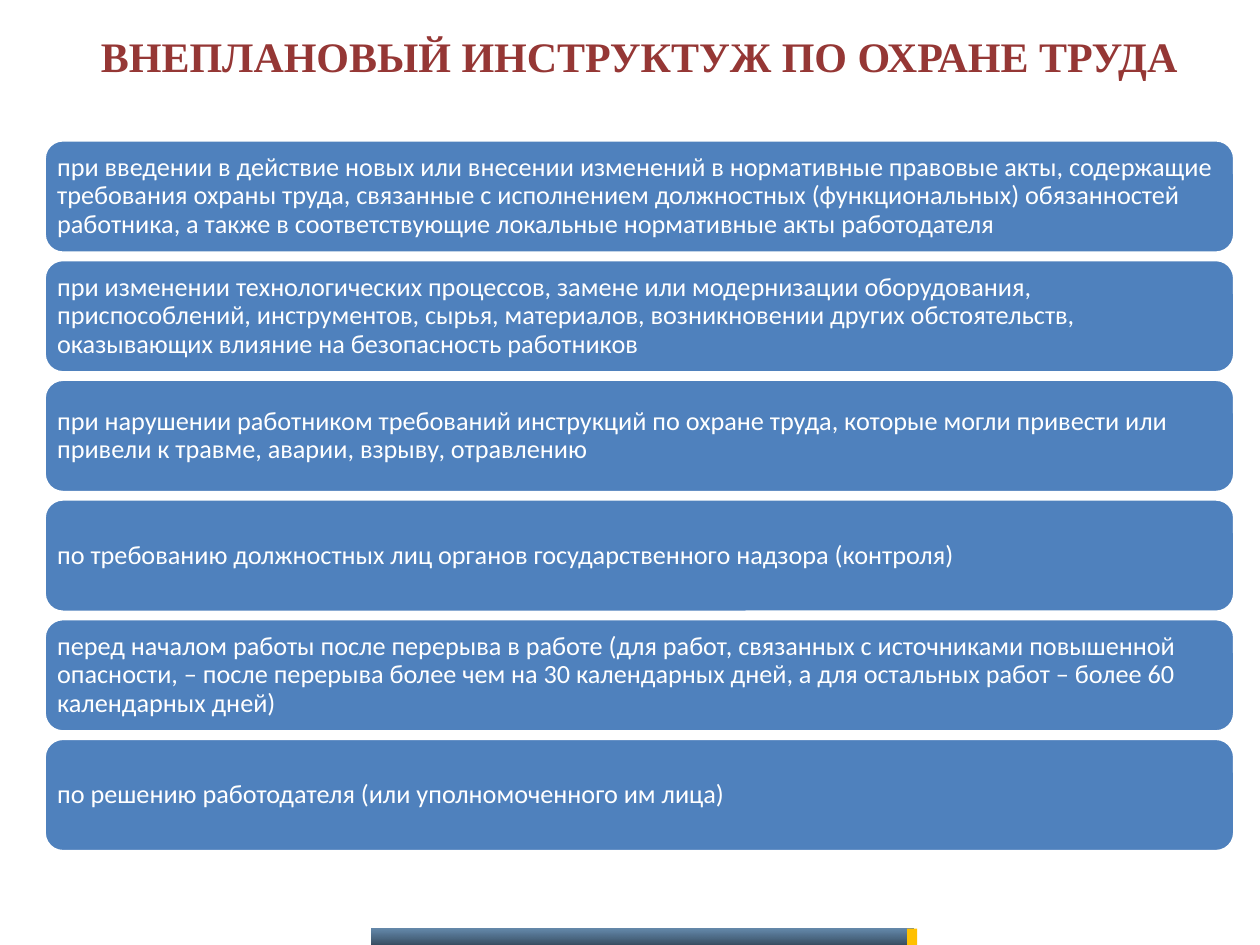
from lxml import etree
from pptx import Presentation
from pptx.dml.color import RGBColor
from pptx.enum.shapes import MSO_SHAPE
from pptx.enum.text import MSO_ANCHOR, MSO_AUTO_SIZE, PP_ALIGN
from pptx.oxml.ns import qn
from pptx.util import Inches, Pt

RECT, ROUNDED = MSO_SHAPE.RECTANGLE, MSO_SHAPE.ROUNDED_RECTANGLE
MIDDLE = MSO_ANCHOR.MIDDLE
LEFT, CENTER = PP_ALIGN.LEFT, PP_ALIGN.CENTER

# Content
TITLE = "ВНЕПЛАНОВЫЙ ИНСТРУКТУЖ ПО ОХРАНЕ ТРУДА"
REASONS = [
    "при введении в действие новых или внесении изменений в нормативные правовые акты, "
    "содержащие требования охраны труда, связанные с исполнением должностных "
    "(функциональных) обязанностей работника, а также в соответствующие локальные "
    "нормативные акты работодателя",
    "при изменении технологических процессов, замене или модернизации оборудования, "
    "приспособлений, инструментов, сырья, материалов, возникновении других "
    "обстоятельств, оказывающих влияние на безопасность работников",
    "при нарушении работником требований инструкций по охране труда, которые могли "
    "привести или привели к травме, аварии, взрыву, отравлению",
    "по требованию должностных лиц органов государственного надзора (контроля)",
    "перед началом работы после перерыва в работе (для работ, связанных с источниками "
    "повышенной опасности, – после перерыва более чем на 30 календарных дней, а для "
    "остальных работ – более 60 календарных дней)",
    "по решению работодателя (или уполномоченного им лица)",
]
FOOTER_STOPS = [("003C73", 60), ("001C35", 80)]  # colour, opacity in percent

# Layout in inches
X, WIDTH = 0.35, 9.45
CARD_TOP, CARD_HEIGHT, CARD_STEP = 1.11, 0.9, 0.95
FOOTER_TOP, FOOTER_HEIGHT = 7.37, 0.13


def rgb(value):
    return RGBColor.from_string(value)


def add_box(shapes, kind, x, y, w, h, fill=None):
    sp = shapes.add_shape(kind, Inches(x), Inches(y), Inches(w), Inches(h))
    sp.shadow.inherit = False
    sp.line.fill.background()
    if fill:
        sp.fill.solid()
        sp.fill.fore_color.rgb = rgb(fill)
    return sp


def set_text(sp, text, font, size, color, align, inset):
    tf = sp.text_frame
    tf.word_wrap = True
    tf.auto_size = MSO_AUTO_SIZE.NONE
    tf.vertical_anchor = MIDDLE
    tf.margin_left = tf.margin_right = tf.margin_top = tf.margin_bottom = Inches(inset)
    p = tf.paragraphs[0]
    p.text = text
    p.alignment = align
    p.font.name = font
    p.font.size = Pt(size)
    p.font.color.rgb = rgb(color)
    return p


prs = Presentation()
prs.slide_width, prs.slide_height = Inches(10), Inches(7.5)
s = prs.slides.add_slide(prs.slide_layouts[5])

# Footer strip with a translucent gradient and a yellow end mark
strip = add_box(s.shapes, RECT, 2.95, FOOTER_TOP, 4.3, FOOTER_HEIGHT)
strip.fill.gradient()
strip.fill.gradient_angle = 270
for stop, (color, opacity) in zip(strip.fill.gradient_stops, FOOTER_STOPS):
    stop.color.rgb = rgb(color)
for clr, (color, opacity) in zip(strip.element.spPr.iter(qn("a:srgbClr")), FOOTER_STOPS):
    etree.SubElement(clr, qn("a:alpha")).set("val", str(opacity * 1000))
add_box(s.shapes, RECT, 7.2, FOOTER_TOP, 0.08, FOOTER_HEIGHT, "FFC000")

# Title
title = s.shapes.title
title.left, title.top = Inches(X), Inches(0.13)
title.width, title.height = Inches(WIDTH), Inches(0.63)
p = set_text(title, TITLE, "Times New Roman", 24, "953735", CENTER, 0.12)
p.font.bold = True

# Stack of reason cards
for i, reason in enumerate(REASONS):
    card = add_box(s.shapes, ROUNDED, X, CARD_TOP + i * CARD_STEP, WIDTH, CARD_HEIGHT, "4F81BD")
    card.line.color.rgb = rgb("FFFFFF")
    card.line.width = Pt(2)
    p = set_text(card, reason, "Calibri", 15, "FFFFFF", LEFT, 0.06)
    p.line_spacing = 0.9

prs.save("out.pptx")
